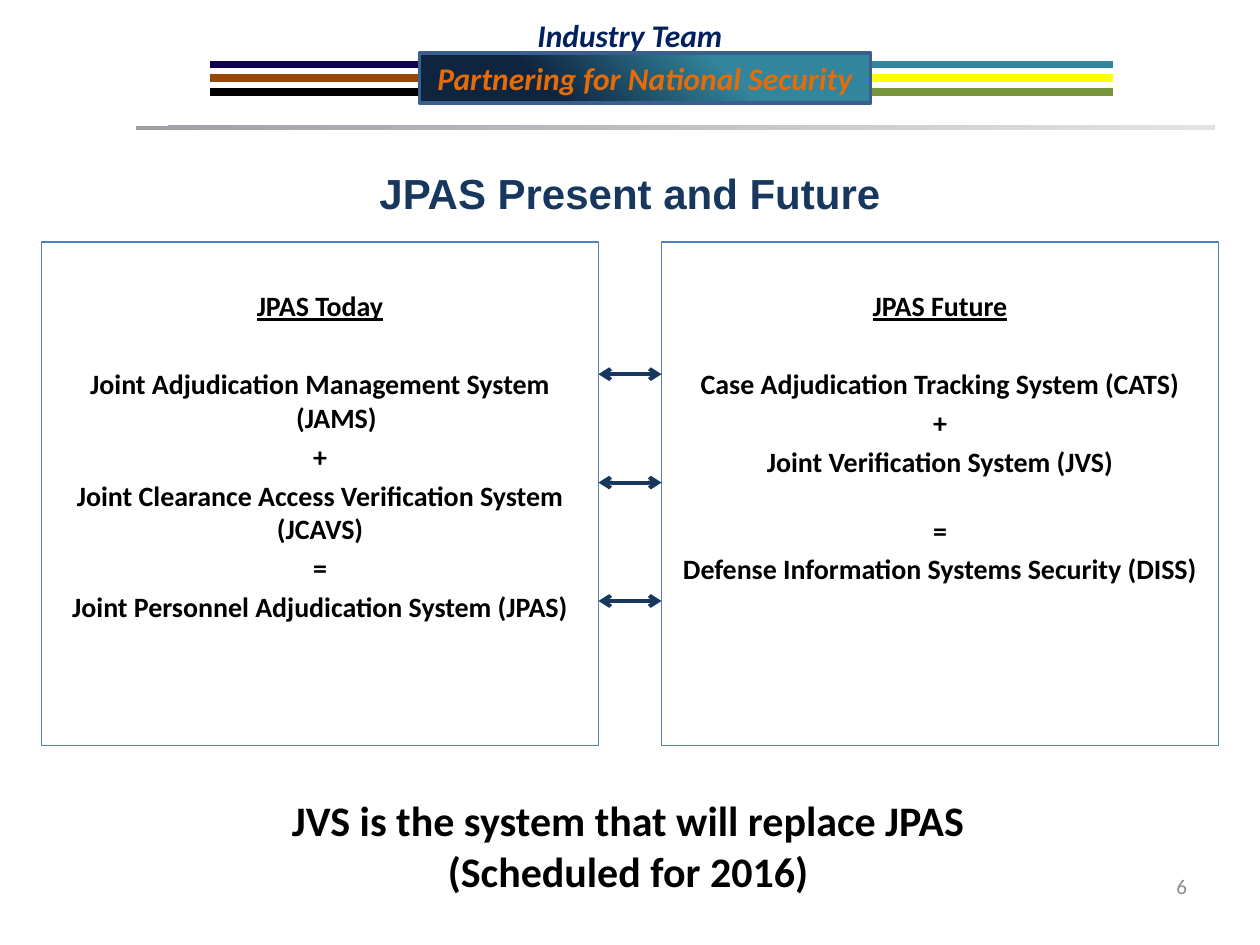
from pptx import Presentation
from pptx.dml.color import RGBColor
from pptx.enum.shapes import MSO_CONNECTOR, MSO_SHAPE
from pptx.enum.text import MSO_ANCHOR, PP_ALIGN
from pptx.oxml.ns import qn
from pptx.util import Inches, Pt
from lxml.etree import SubElement

NAVY = RGBColor(0x17, 0x37, 0x5E)
INDIGO = RGBColor(0x00, 0x20, 0x60)
TEAL = RGBColor(0x31, 0x85, 0x9C)
YELLOW = RGBColor(0xFF, 0xFF, 0x00)
GREEN = RGBColor(0x77, 0x93, 0x3C)
PURPLE = RGBColor(0x0F, 0x00, 0x50)
BROWN = RGBColor(0x98, 0x48, 0x07)
BLACK = RGBColor(0x00, 0x00, 0x00)
ORANGE = RGBColor(0xE4, 0x6C, 0x0A)
GREY = RGBColor(0x8C, 0x8C, 0x8C)
DARK = RGBColor(0x0F, 0x24, 0x3E)
EDGE = RGBColor(0x3A, 0x5F, 0x8C)
BLUE = RGBColor(0x4F, 0x81, 0xBD)
ASH = RGBColor(0x9E, 0xA0, 0xA6)
SILVER = RGBColor(0xE3, 0xE3, 0xE4)

HEAD = {"size": Pt(18), "bold": True, "italic": True}
BODY = {"size": Pt(16), "bold": True}
LARGE = {"size": Pt(24), "bold": True}


class Deck:
    """Holds the base text style and the current slide."""

    def __init__(self, slide):
        self.slide = slide
        self.font = {"name": "Calibri"}

    def put(self, frame, rows, style, color, align=PP_ALIGN.CENTER):
        frame.word_wrap = True
        for i, (text, extra) in enumerate(rows):
            para = frame.paragraphs[0] if i == 0 else frame.add_paragraph()
            para.alignment = align
            if "gap" in extra:
                para.space_before = Pt(extra["gap"])
            hang = Inches(extra.get("hang", 0))
            if hang:
                props = para._p.get_or_add_pPr()
                props.set("marL", str(hang))
                props.set("indent", str(-hang))
            run = para.add_run()
            run.text = text
            for key, value in {**self.font, **style, **extra.get("font", {})}.items():
                setattr(run.font, key, value)
            run.font.color.rgb = color

    def text(self, area, rows, style, color, align=PP_ALIGN.CENTER, **frame):
        box = self.slide.shapes.add_textbox(*map(Inches, area))
        for key, value in frame.items():
            setattr(box.text_frame, key, value)
        self.put(box.text_frame, rows, style, color, align)

    def rect(self, area, edge=None, width=0, grad=None, angle=0):
        box = self.slide.shapes.add_shape(MSO_SHAPE.RECTANGLE, *map(Inches, area))
        box.shadow.inherit = False
        if grad:
            box.fill.gradient()
            box.fill.gradient_angle = angle
            for stop, (place, color) in zip(box.fill.gradient_stops, grad):
                stop.position = place
                stop.color.rgb = color
        else:
            box.fill.background()
        if edge is None:
            box.line.fill.background()
        else:
            box.line.color.rgb = edge
            box.line.width = Pt(width)
        return box.text_frame

    def rule(self, start, end, color, width, arrows=False):
        line = self.slide.shapes.add_connector(
            MSO_CONNECTOR.STRAIGHT, *map(Inches, (*start, *end)))
        line.line.color.rgb = color
        line.line.width = Pt(width)
        props = line._element.spPr
        if arrows:
            for tag in ("a:headEnd", "a:tailEnd"):
                SubElement(props.find(qn("a:ln")), qn(tag), type="arrow")
        SubElement(props, qn("a:effectLst"))

    def panel(self, left, rows):
        frame = self.rect((left, 1.92, 4.42, 4), BLUE, 0.75)
        frame.vertical_anchor = MSO_ANCHOR.TOP
        frame.margin_top = Inches(0.37)
        self.put(frame, rows, BODY, BLACK)


def main():
    show = Presentation()
    show.slide_width, show.slide_height = Inches(10), Inches(7.5)
    deck = Deck(show.slides.add_slide(show.slide_layouts[6]))

    sides = ((5.71, 8.83, 0.51, (TEAL, YELLOW, GREEN)),
             (1.67, 3.92, 0.51, (PURPLE, BROWN, BLACK)))
    for left, right, top, colors in sides:
        for i, color in enumerate(colors):
            y = top + 0.11 * i
            deck.rule((left, y), (right, y), color, 4.25)
    deck.text((0, 0.08, 10, 0.4), [("Industry Team", {})], HEAD, INDIGO)
    banner = deck.rect((3.33, 0.42, 3.58, 0.4), EDGE, 2,
                       ((0.28, DARK), (0.68, TEAL)), 45)
    banner.vertical_anchor = MSO_ANCHOR.MIDDLE
    deck.put(banner, [("Partnering for National Security", {})], HEAD, ORANGE)
    deck.rect((1.08, 1, 8.56, 0.03), grad=((0, ASH), (1, SILVER)), angle=315)

    deck.text((0.5, 1.25, 9, 5.58),
              [("JPAS Present and Future", {"hang": 0.38, "font": {"name": "Arial"}})],
              LARGE, NAVY, margin_top=Inches(0.08))

    under = {"font": {"underline": True}}
    first = {"gap": 25.6, "hang": 0.26}
    flat = {"gap": 3}
    item = {**flat, "hang": 0.26}
    deck.panel(0.33, [
        ("JPAS Today", {**under, "hang": 0.38}),
        ("Joint Adjudication Management System (JAMS)", first),
        ("+", item),
        ("Joint Clearance Access Verification System (JCAVS)", flat),
        ("=", flat),
        ("Joint Personnel Adjudication System (JPAS)", item)])
    deck.panel(5.25, [
        ("JPAS Future", {**under, "hang": 0.26}),
        ("Case Adjudication Tracking System (CATS)", first),
        ("+", item),
        ("Joint Verification System (JVS)", item),
        ("=", {**item, "gap": 20}),
        ("Defense Information Systems Security (DISS)", item)])
    for y in (2.97, 3.83, 4.77):
        deck.rule((4.75, y), (5.25, y), NAVY, 2.25, arrows=True)

    deck.text((1.43, 6.26, 7.11, 0.91),
              [("JVS is the system that will replace JPAS", {"hang": 0.25}),
               ("(Scheduled for 2016)", {"hang": 0.25})], LARGE, BLACK)
    deck.text((7.19, 6.83, 2.33, 0.4), [("6", {})], {"size": Pt(12)}, GREY,
              PP_ALIGN.RIGHT, vertical_anchor=MSO_ANCHOR.MIDDLE)
    show.save("out.pptx")


if __name__ == "__main__":
    main()
